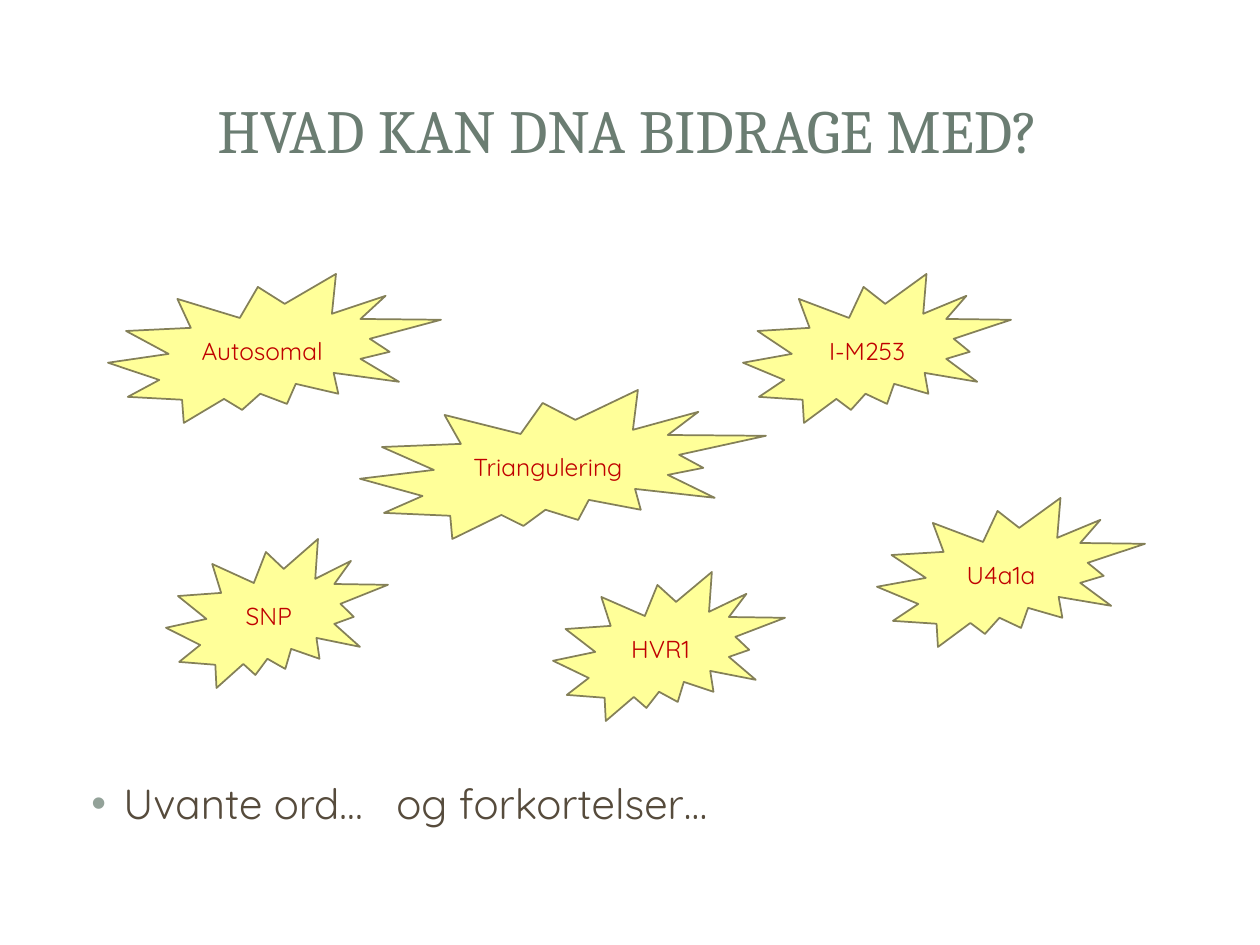
from lxml import etree
from pptx import Presentation
from pptx.dml.color import RGBColor
from pptx.enum.shapes import MSO_SHAPE as Preset
from pptx.enum.text import MSO_ANCHOR as Anchor, PP_ALIGN as Align
from pptx.oxml.ns import qn
from pptx.util import Emu, Pt

PX_PER_INCH = 126
EMU_PER_PX = 914400 / PX_PER_INCH
SLIDE_SIZE = (1260, 945)

# label, left, top, width
BURSTS = [
    ("Autosomal", 108, 274, 333),
    ("Triangulering", 360, 390, 406),
    ("HVR1", 553, 572, 232),
    ("U4a1a", 877, 498, 268),
    ("I-M253", 743, 274, 268),
    ("SNP", 166, 539, 222),
]
BURST_HEIGHT = 149


def px(value):
    return Emu(round(value * EMU_PER_PX))


def color(hex_value):
    return RGBColor.from_string(hex_value)


class SlideBuilder:
    TITLE = {"name": "Cambria", "size": Pt(35)}
    BODY = {"name": "Quicksand", "size": Pt(24)}
    LABEL = {"name": "Quicksand", "size": Pt(14)}
    TITLE_COLOR, BODY_COLOR, LABEL_COLOR = "6B7D72", "564B3C", "C00000"
    BULLET_COLOR, BURST_FILL, BURST_LINE = "93A299", "FFFF99", "848058"

    def __init__(self, slide):
        self.slide = slide

    def add_text(self, shape, text, font_format, text_color, align):
        """Put one vertically centred paragraph into the shape and return it."""
        frame = shape.text_frame
        frame.word_wrap = True
        frame.vertical_anchor = Anchor.MIDDLE
        paragraph = frame.paragraphs[0]
        paragraph.alignment = align
        run = paragraph.add_run()
        run.text = text
        for name, value in font_format.items():
            setattr(run.font, name, value)
        run.font.color.rgb = color(text_color)
        return paragraph

    def text_box(self, text, box, font_format, text_color, align=Align.LEFT):
        shape = self.slide.shapes.add_textbox(*map(px, box))
        return self.add_text(shape, text, font_format, text_color, align)

    def title(self, text, box):
        self.text_box(text, box, self.TITLE, self.TITLE_COLOR, Align.CENTER)

    def body(self, text, box):
        return self.text_box(text, box, self.BODY, self.BODY_COLOR)

    def bullet(self, text, box):
        properties = self.body(text, box)._p.get_or_add_pPr()
        properties.set("marL", str(px(48)))
        properties.set("indent", str(-px(32)))
        bullet_color = etree.SubElement(properties, qn("a:buClr"))
        etree.SubElement(bullet_color, qn("a:srgbClr"), val=self.BULLET_COLOR)
        etree.SubElement(properties, qn("a:buFont"), typeface="Arial")
        etree.SubElement(properties, qn("a:buChar"), char="•")

    def burst(self, text, box):
        shape = self.slide.shapes.add_shape(Preset.EXPLOSION2, *map(px, box))
        shape.shadow.inherit = False
        shape.fill.solid()
        shape.fill.fore_color.rgb = color(self.BURST_FILL)
        shape.line.color.rgb = color(self.BURST_LINE)
        shape.line.width = Pt(1)
        for side in ("left", "right", "top", "bottom"):
            setattr(shape.text_frame, f"margin_{side}", 0)
        self.add_text(shape, text, self.LABEL, self.LABEL_COLOR, Align.CENTER)


def main():
    presentation = Presentation()
    presentation.slide_width, presentation.slide_height = map(px, SLIDE_SIZE)
    builder = SlideBuilder(presentation.slides.add_slide(presentation.slide_layouts[6]))

    builder.title("HVAD KAN DNA BIDRAGE MED?", (59, 57, 1138, 144))
    builder.bullet("Uvante ord…", (63, 773, 320, 60))
    builder.body("og forkortelser…", (384, 773, 813, 60))
    for label, left, top, width in BURSTS:
        builder.burst(label, (left, top, width, BURST_HEIGHT))

    presentation.save("out.pptx")


if __name__ == "__main__":
    main()
